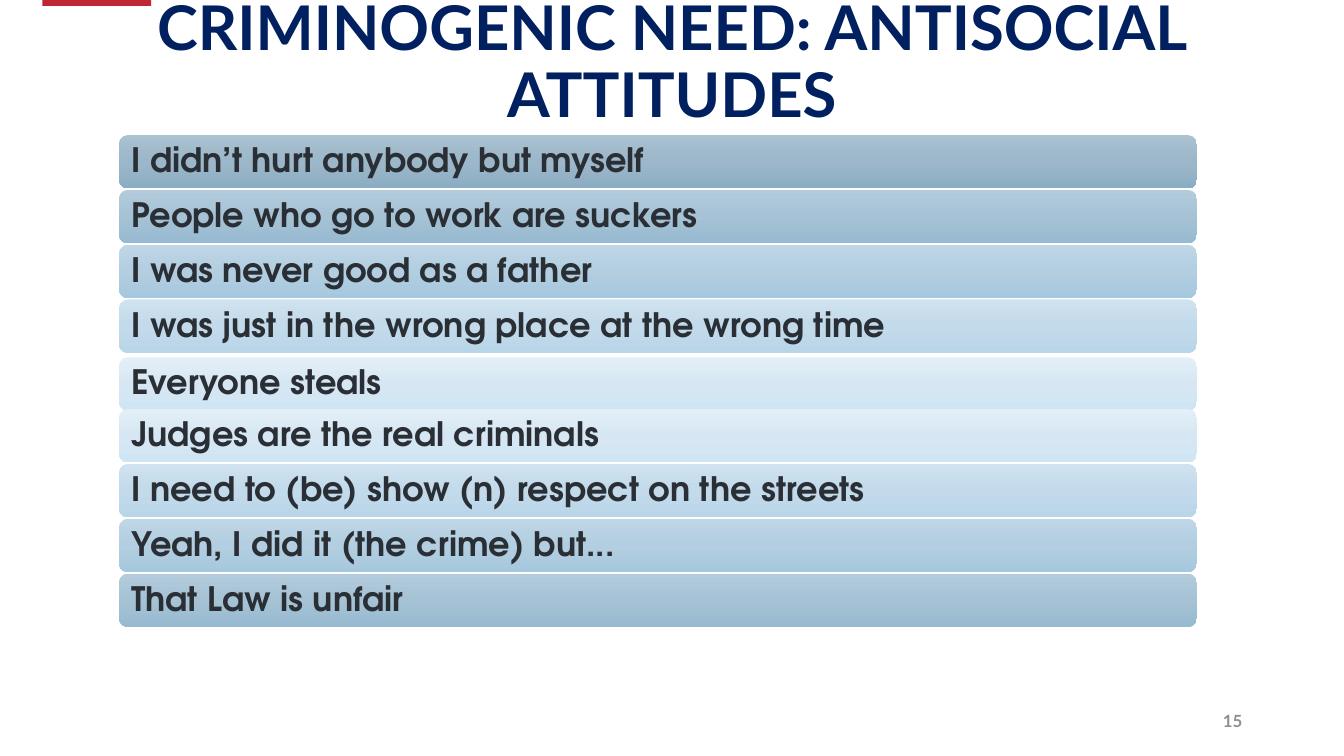
from copy import deepcopy

from pptx import Presentation
from pptx.dml.color import RGBColor
from pptx.enum.shapes import MSO_SHAPE
from pptx.enum.text import MSO_ANCHOR, PP_ALIGN
from pptx.util import Inches, Pt

RECTANGLE = MSO_SHAPE.RECTANGLE
ROUNDED = MSO_SHAPE.ROUNDED_RECTANGLE
MIDDLE = MSO_ANCHOR.MIDDLE
LEFT, CENTER, RIGHT = PP_ALIGN.LEFT, PP_ALIGN.CENTER, PP_ALIGN.RIGHT

RED = RGBColor(0xC1, 0x26, 0x37)
NAVY = RGBColor(0x00, 0x20, 0x60)
GRAY = RGBColor(0x8E, 0x8F, 0x91)
INK = RGBColor(0x2A, 0x2F, 0x36)

# Bar shades from darkest to lightest: top, middle and bottom colour
SHADES = [
    [RGBColor.from_string(code) for code in codes.split()]
    for codes in (
        "AAC1D0 9CB7C9 8BADC3",
        "B3CBDC A6C2D5 96BAD1",
        "BFD6E6 B2CEE0 A6C8DE",
        "D0E2EF C2DAEA B9D6E9",
        "E3EFF7 D6E7F3 D0E5F3",
    )
]

# Statement and index of its shade
ATTITUDES = [
    ("I didn’t hurt anybody but myself", 0),
    ("People who go to work are suckers", 1),
    ("I was never good as a father", 2),
    ("I was just in the wrong place at the wrong time", 3),
    ("Everyone steals", 4),
    ("Judges are the real criminals", 4),
    ("I need to (be) show (n) respect on the streets", 3),
    ("Yeah, I did it (the crime) but...", 2),
    ("That Law is unfair", 1),
]
FIRST_TOP, LAST_TOP = 1.34, 5.69
PITCH = (LAST_TOP - FIRST_TOP) / (len(ATTITUDES) - 1)
LOWERED_BAR, LOWERED_BY = 4, 0.03

TITLE_FONT = {"name": "Lato", "size": Pt(44), "bold": True}
NUMBER_FONT = {"name": "Lato", "size": Pt(12), "bold": True}
BAR_FONT = {"name": "TeX Gyre Adventor", "size": Pt(24), "bold": True}

TITLE_PARAGRAPH = {"alignment": CENTER, "line_spacing": 0.9}
NUMBER_PARAGRAPH = {"alignment": RIGHT, "space_after": Pt(4.5)}
BAR_PARAGRAPH = {"alignment": LEFT, "line_spacing": 0.9, "space_after": Pt(8.4)}


def set_attributes(target, values):
    for name, value in values.items():
        setattr(target, name, value)


def write_text(shape, text, paragraph_format, font_format, color):
    frame = shape.text_frame
    frame.word_wrap = True
    frame.vertical_anchor = MIDDLE
    paragraph = frame.paragraphs[0]
    set_attributes(paragraph, paragraph_format)
    run = paragraph.add_run()
    run.text = text
    set_attributes(run.font, font_format)
    run.font.color.rgb = color
    return frame


def add_text(slide, box, *text_and_format):
    textbox = slide.shapes.add_textbox(*map(Inches, box))
    write_text(textbox, *text_and_format)


def add_plain_shape(slide, kind, box):
    shape = slide.shapes.add_shape(kind, *map(Inches, box))
    shape.shadow.inherit = False
    shape.line.fill.background()
    return shape


def fill_downward(shape, colors):
    """Fill with evenly spaced gradient colours from top to bottom."""
    fill = shape.fill
    fill.gradient()
    fill.gradient_angle = 270
    stop_list = shape._element.spPr.xpath("a:gradFill/a:gsLst")[0]
    while len(stop_list) < len(colors):
        stop_list.append(deepcopy(stop_list[0]))
    for index, (stop, color) in enumerate(zip(fill.gradient_stops, colors)):
        stop.position = index / (len(colors) - 1)
        stop.color.rgb = color


def add_attitude_bar(slide, top, statement, colors):
    bar = add_plain_shape(slide, ROUNDED, (1.18, top, 10.69, 0.53))
    fill_downward(bar, colors)
    frame = write_text(bar, statement, BAR_PARAGRAPH, BAR_FONT, INK)
    margins = ("margin_left", "margin_top", "margin_right", "margin_bottom")
    set_attributes(frame, dict.fromkeys(margins, Inches(0.1)))


def main():
    presentation = Presentation()
    presentation.slide_width = Inches(13.33)
    presentation.slide_height = Inches(7.5)
    slide = presentation.slides.add_slide(presentation.slide_layouts[6])

    accent = add_plain_shape(slide, RECTANGLE, (0.42, -0.04, 1.08, 0.1))
    accent.fill.solid()
    accent.fill.fore_color.rgb = RED

    add_text(slide, (9.42, 6.95, 3, 0.4), "15",
             NUMBER_PARAGRAPH, NUMBER_FONT, GRAY)
    add_text(slide, (0.24, 0.15, 12.85, 0.97),
             "CRIMINOGENIC NEED: ANTISOCIAL ATTITUDES",
             TITLE_PARAGRAPH, TITLE_FONT, NAVY)

    for index, (statement, shade) in enumerate(ATTITUDES):
        top = FIRST_TOP + index * PITCH
        if index == LOWERED_BAR:
            top += LOWERED_BY
        add_attitude_bar(slide, top, statement, SHADES[shade])

    presentation.save("out.pptx")


if __name__ == "__main__":
    main()
